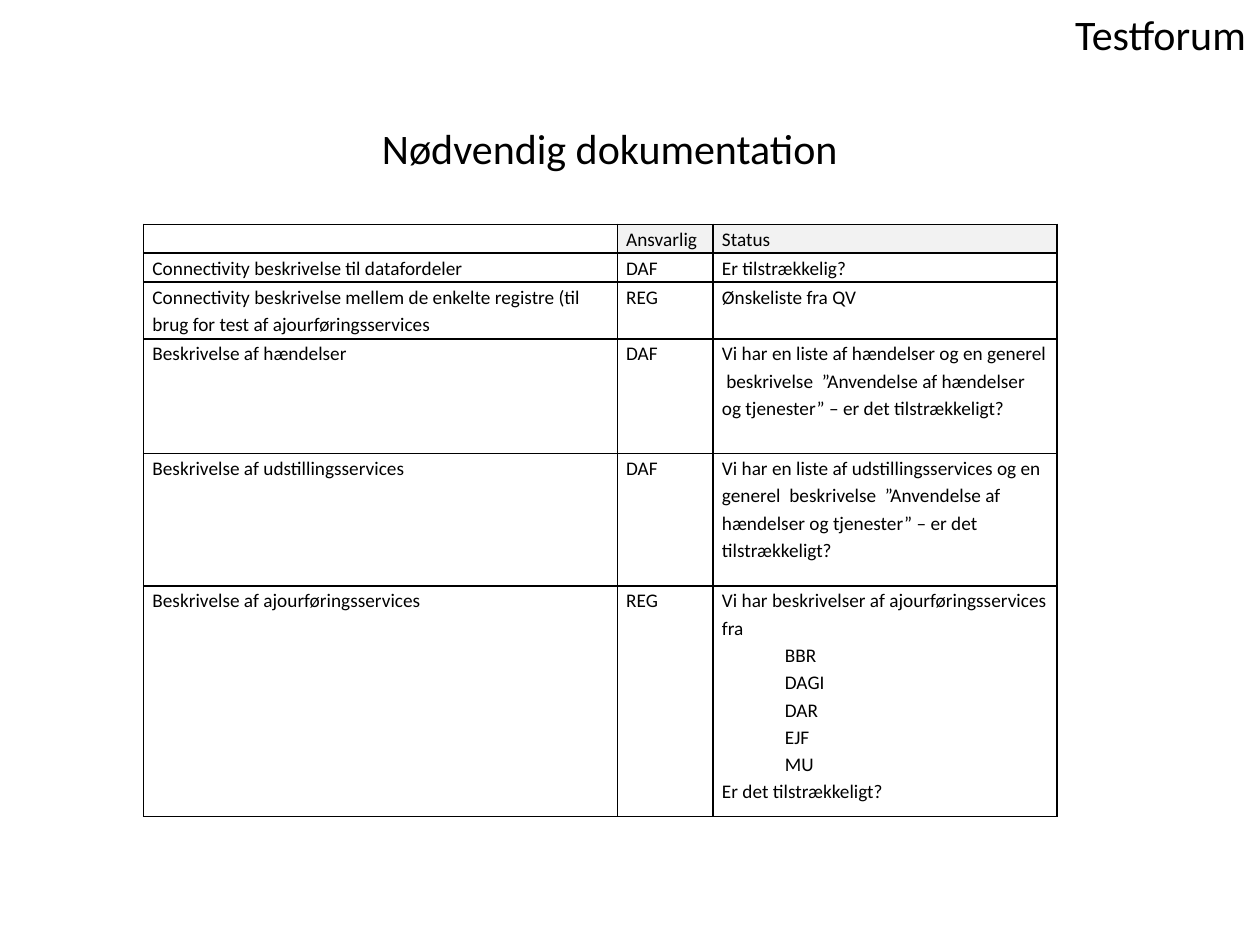
"""Build the slide listing the documentation needed for the test forum."""
import dataclasses

import lxml.etree
import pptx
import pptx.dml.color
import pptx.enum.text
import pptx.oxml.ns
import pptx.util

Inches = pptx.util.Inches
Pt = pptx.util.Pt
qn = pptx.oxml.ns.qn

COLORS = {"text": "000000", "border": "000000", "header": "F2F2F2", "page": "FFFFFF"}
FONT = "Calibri"
TABLE_SIZE = 11
COLUMN_WIDTHS = (3.76, 0.76, 2.73)


@dataclasses.dataclass(frozen=True)
class Heading:
    text: str
    left: float
    top: float
    width: float
    height: float
    wrap: bool


@dataclasses.dataclass(frozen=True)
class DocumentRow:
    height: float
    topic: str
    owner: str
    status: str


HEADINGS = (
    Heading("Testforum", 8.42, 0.02, 1.58, 0.5, False),
    Heading("Nødvendig dokumentation", 2.32, 0.92, 5.04, 0.5, True),
)

ROWS = (
    DocumentRow(0.23, "", "Ansvarlig", "Status"),
    DocumentRow(0.23, "Connectivity beskrivelse til datafordeler", "DAF", "Er tilstrækkelig?"),
    DocumentRow(
        0.45,
        "Connectivity beskrivelse mellem de enkelte registre (til brug for test af ajourføringsservices",
        "REG",
        "Ønskeliste fra QV ",
    ),
    DocumentRow(
        0.91,
        "Beskrivelse af hændelser  ",
        "DAF",
        "Vi har en liste af hændelser og en generel  beskrivelse  "
        "”Anvendelse af hændelser og tjenester” – er det tilstrækkeligt? ",
    ),
    DocumentRow(
        1.05,
        "Beskrivelse af udstillingsservices",
        "DAF",
        "Vi har en liste af udstillingsservices og en generel  beskrivelse  "
        "”Anvendelse af hændelser og tjenester” – er det tilstrækkeligt?",
    ),
    DocumentRow(
        1.83,
        "Beskrivelse af ajourføringsservices",
        "REG",
        "Vi har beskrivelser af ajourføringsservices fra\n"
        "\tBBR\n\tDAGI\n\tDAR\n\tEJF\n\tMU\nEr det tilstrækkeligt?",
    ),
)


def rgb(name: str) -> pptx.dml.color.RGBColor:
    return pptx.dml.color.RGBColor.from_string(COLORS[name])


def format_runs(paragraph, size: float) -> None:
    for run in paragraph.runs:
        run.font.name = FONT
        run.font.size = Pt(size)
        run.font.color.rgb = rgb("text")


def draw_heading(slide, heading: Heading) -> None:
    box = slide.shapes.add_textbox(
        Inches(heading.left), Inches(heading.top), Inches(heading.width), Inches(heading.height)
    )
    frame = box.text_frame
    frame.word_wrap = heading.wrap
    frame.text = heading.text
    frame.paragraphs[0].alignment = pptx.enum.text.PP_ALIGN.CENTER
    format_runs(frame.paragraphs[0], 24)


def draw_borders(cell) -> None:
    properties = cell._tc.get_or_add_tcPr()
    for side in ("a:lnL", "a:lnR", "a:lnT", "a:lnB"):
        line = lxml.etree.SubElement(properties, qn(side), w=str(Pt(1)))
        fill = lxml.etree.SubElement(line, qn("a:solidFill"))
        lxml.etree.SubElement(fill, qn("a:srgbClr"), val=COLORS["border"])


def fill_cell(cell, text: str, shaded: bool) -> None:
    cell.margin_left = cell.margin_right = Inches(0.07)
    cell.margin_top = cell.margin_bottom = 0
    draw_borders(cell)
    if shaded:
        cell.fill.solid()
        cell.fill.fore_color.rgb = rgb("header")
    else:
        cell.fill.background()
    for index, line in enumerate(text.split("\n")):
        frame = cell.text_frame
        paragraph = frame.add_paragraph() if index else frame.paragraphs[0]
        paragraph.text = line.lstrip("\t")
        paragraph.alignment = pptx.enum.text.PP_ALIGN.LEFT
        paragraph.line_spacing = 1.15
        if line.startswith("\t"):
            paragraph.level = 1
            paragraph._p.get_or_add_pPr().set("marL", str(Inches(0.5)))
        format_runs(paragraph, TABLE_SIZE)
        if not line:
            lxml.etree.SubElement(paragraph._p, qn("a:endParaRPr"), sz=str(TABLE_SIZE * 100))


def draw_table(slide, rows: tuple[DocumentRow, ...]) -> None:
    table = slide.shapes.add_table(
        len(rows),
        len(COLUMN_WIDTHS),
        Inches(1.14),
        Inches(1.78),
        Inches(sum(COLUMN_WIDTHS)),
        Inches(sum(row.height for row in rows)),
    ).table
    table.horz_banding = False
    table.first_row = False
    for column, width in zip(table.columns, COLUMN_WIDTHS):
        column.width = Inches(width)
    for row_index, row in enumerate(rows):
        table.rows[row_index].height = Inches(row.height)
        for column_index, text in enumerate((row.topic, row.owner, row.status)):
            shaded = row_index == 0 and column_index > 0
            fill_cell(table.cell(row_index, column_index), text, shaded)


def main() -> None:
    presentation = pptx.Presentation()
    presentation.slide_width = Inches(10)
    presentation.slide_height = Inches(7.5)
    slide = presentation.slides.add_slide(presentation.slide_layouts[6])
    slide.background.fill.solid()
    slide.background.fill.fore_color.rgb = rgb("page")
    for heading in HEADINGS:
        draw_heading(slide, heading)
    draw_table(slide, ROWS)
    presentation.save("out.pptx")


if __name__ == "__main__":
    main()
